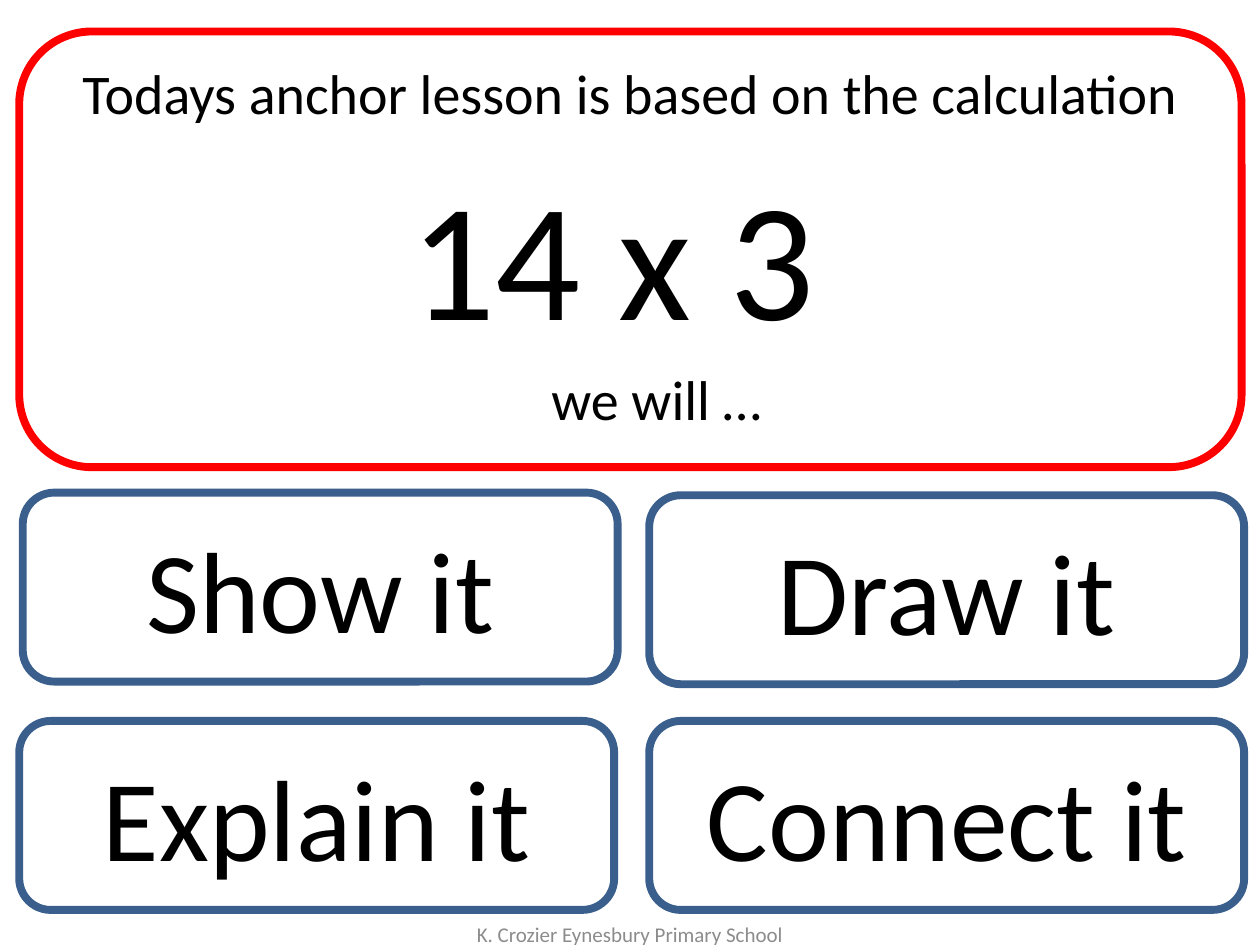
from pptx import Presentation
from pptx.dml.color import RGBColor
from pptx.enum.shapes import MSO_SHAPE
from pptx.enum.text import MSO_ANCHOR, MSO_AUTO_SIZE, PP_ALIGN
from pptx.util import Pt

BLACK, GREY, RED, BLUE = "000000", "8C8C8C", "FF0000", "3A5F8C"
LEFT_COLUMN, RIGHT_COLUMN = 13, 371
TOP_ROW, BOTTOM_ROW = 281.5, 412
STEP_WIDTH, STEP_HEIGHT = 340, 108


def rgb(colour):
    return RGBColor.from_string(colour)


def write(shape, words, size, colour=BLACK, align=PP_ALIGN.CENTER,
          anchor=MSO_ANCHOR.MIDDLE, wrap=True):
    frame = shape.text_frame
    frame.word_wrap = wrap
    frame.auto_size = MSO_AUTO_SIZE.NONE
    frame.vertical_anchor = anchor
    paragraph = frame.paragraphs[0]
    paragraph.alignment = align
    run = paragraph.add_run()
    run.text = words
    run.font.name = "Calibri"
    run.font.size = Pt(size)
    run.font.color.rgb = rgb(colour)


def add_frame(slide, left, top, width, height, colour):
    """Add an unfilled rounded rectangle with a thick outline."""
    frame = slide.shapes.add_shape(MSO_SHAPE.ROUNDED_RECTANGLE, Pt(left), Pt(top),
                                   Pt(width), Pt(height))
    frame.shadow.inherit = False
    frame.fill.background()
    frame.line.color.rgb = rgb(colour)
    frame.line.width = Pt(4.5)
    return frame


def add_label(slide, left, top, width, height, words, size, **style):
    label = slide.shapes.add_textbox(Pt(left), Pt(top), Pt(width), Pt(height))
    write(label, words, size, **style)


def place_calculation(slide, calculation):
    title = slide.shapes.title
    title.left, title.top, title.width, title.height = Pt(227.5), Pt(83.5), Pt(248), Pt(124)
    write(title, calculation, 96, align=PP_ALIGN.LEFT, anchor=MSO_ANCHOR.TOP, wrap=False)


def main():
    deck = Presentation()
    deck.slide_width, deck.slide_height = Pt(720), Pt(540)
    slide = deck.slides.add_slide(deck.slide_layouts[5])

    place_calculation(slide, "14 x 3")
    steps = [
        ("Show it", LEFT_COLUMN, TOP_ROW),
        ("Draw it", RIGHT_COLUMN, TOP_ROW + 1.5),
        ("Explain it", LEFT_COLUMN - 2, BOTTOM_ROW),
        ("Connect it", RIGHT_COLUMN, BOTTOM_ROW),
    ]
    for step, left, top in steps:
        write(add_frame(slide, left, top, STEP_WIDTH, STEP_HEIGHT, BLUE), step, 66)

    lesson = add_frame(slide, 11, 18, 698.5, 249, RED)
    write(lesson, "Todays anchor lesson is based on the calculation", 32,
          anchor=MSO_ANCHOR.TOP)
    add_label(slide, 308, 205, 136, 46, "we will …", 32, align=PP_ALIGN.LEFT,
              anchor=MSO_ANCHOR.TOP, wrap=False)
    add_label(slide, 246, 519, 228, 29, "K. Crozier Eynesbury Primary School", 12,
              colour=GREY)

    deck.save("out.pptx")


if __name__ == "__main__":
    main()
